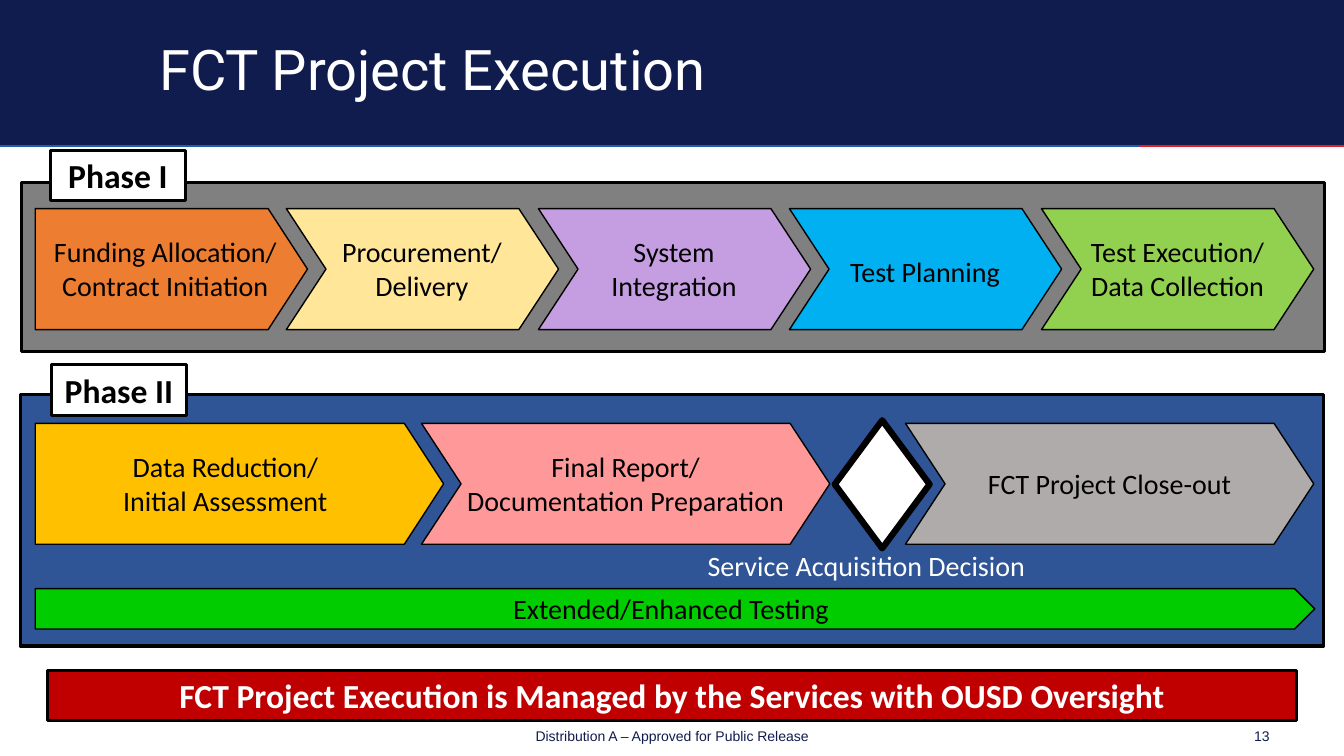
import dataclasses

import pptx
import pptx.dml.color
import pptx.enum.shapes
import pptx.enum.text
import pptx.oxml.ns
import pptx.util
from lxml import etree

SHAPE = pptx.enum.shapes.MSO_SHAPE
ALIGN = pptx.enum.text.PP_ALIGN
ANCHOR = pptx.enum.text.MSO_ANCHOR
FIT = pptx.enum.text.MSO_AUTO_SIZE
SCALE = 9144  # EMU in one px, 100 px to the inch


def emu(*sizes):
    return [size * SCALE for size in sizes]


def rgb(code):
    return pptx.dml.color.RGBColor.from_string(code)


@dataclasses.dataclass(frozen=True)
class Theme:
    navy: str = "111C4E"
    blue: str = "265CAA"
    red: str = "E21E26"
    black: str = "000000"
    white: str = "FFFFFF"
    gray: str = "808080"
    steel: str = "2F5597"
    crimson: str = "C00000"
    green: str = "00CC00"
    orange: str = "ED7D31"
    cream: str = "FFE699"
    violet: str = "C59EE2"
    sky: str = "00B0F0"
    lime: str = "92D050"
    gold: str = "FFC000"
    pink: str = "FF9999"
    silver: str = "AFABAB"
    body: str = "Calibri"
    head: str = "Roboto"
    foot: str = "Arial"
    title: int = 40
    large: int = 24
    label: int = 20
    small: int = 10
    thin: float = 1
    edge: float = 2.25
    thick: float = 4.5


class Deck:
    def __init__(self, theme):
        self.theme = theme
        self.file = pptx.Presentation()
        self.file.slide_width, self.file.slide_height = emu(1333, 750)
        self.slide = self.file.slides.add_slide(self.file.slide_layouts[6])

    def letter(self, shape, text, size, color, font=None, bold=False,
               align=ALIGN.CENTER, anchor=ANCHOR.TOP, fit=FIT.SHAPE_TO_FIT_TEXT):
        frame = shape.text_frame
        frame.word_wrap = True
        frame.auto_size = fit
        frame.vertical_anchor = anchor
        frame.text = text
        for para in frame.paragraphs:
            para.alignment = align
            for run in para.runs:
                run.font.name = font or self.theme.body
                run.font.size = pptx.util.Pt(size)
                run.font.bold = bold
                run.font.color.rgb = rgb(color)
        return frame

    def shape(self, kind, box, fill, width=None, adjust=None):
        item = self.slide.shapes.add_shape(kind, *emu(*box))
        item.shadow.inherit = False
        item.fill.solid()
        item.fill.fore_color.rgb = rgb(fill)
        if width:
            item.line.color.rgb = rgb(self.theme.black)
            item.line.width = pptx.util.Pt(width)
        else:
            item.line.fill.background()
        if adjust:
            item.adjustments[0] = adjust
        return item

    def text(self, box, text, size, color, **style):
        item = self.slide.shapes.add_textbox(*emu(*box))
        return self.letter(item, text, size, color, **style)

    def line(self, start, end, color):
        kind = pptx.enum.shapes.MSO_CONNECTOR.STRAIGHT
        item = self.slide.shapes.add_connector(kind, *emu(*start, *end))
        item.line.color.rgb = rgb(color)
        item.line.width = pptx.util.Pt(self.theme.thin)
        props = item._element.spPr
        etree.SubElement(props, pptx.oxml.ns.qn("a:effectLst"))

    def panel(self, box, fill):
        self.shape(SHAPE.RECTANGLE, box, fill, self.theme.edge)

    def tag(self, left, top, text):
        item = self.shape(SHAPE.RECTANGLE, (left, top, 134, 50),
                          self.theme.white, self.theme.edge)
        self.letter(item, text, self.theme.large, self.theme.black,
                    bold=True, anchor=ANCHOR.MIDDLE)

    def step(self, left, top, width, fill, text, span, high=77, first=False,
             right=0, down=0):
        """Draw an arrow and centre its label, moved by right and down."""
        kind, adjust = (SHAPE.PENTAGON, 0.325) if first else (SHAPE.CHEVRON, 0.328)
        self.shape(kind, (left, top, width, 120), fill, self.theme.thin, adjust)
        box = (left + (width - span) // 2 + right, top + (120 - high) // 2 + down,
               span, high)
        self.text(box, text, self.theme.label, self.theme.black)


def main():
    theme = Theme()
    deck = Deck(theme)

    # Header band and footer
    deck.shape(SHAPE.RECTANGLE, (0, 0, 1333, 144), theme.navy)
    deck.line((0, 145), (1131, 145), theme.blue)
    deck.line((1333, 145), (1131, 145), theme.red)
    deck.text((225, 717, 883, 27), "Distribution A – Approved for Public Release",
              theme.small, theme.navy, font=theme.foot)
    deck.text((1122, 710, 147, 40), "13", theme.small, theme.navy, font=theme.foot,
              align=ALIGN.RIGHT, anchor=ANCHOR.MIDDLE, fit=FIT.NONE)
    title = deck.text((148, 35, 1121, 74), "FCT Project Execution", theme.title,
                      theme.white, font=theme.head, align=ALIGN.LEFT,
                      anchor=ANCHOR.MIDDLE, fit=FIT.NONE)
    title.paragraphs[0].line_spacing = 0.9

    # Closing banner
    banner = deck.shape(SHAPE.RECTANGLE, (47, 665, 1239, 50), theme.crimson, theme.edge)
    deck.letter(banner,
                "FCT Project Execution is Managed by the Services with OUSD Oversight",
                theme.large, theme.white, bold=True)

    # Phase I: five even steps
    deck.panel((21, 181, 1293, 168), theme.gray)
    steps = [
        (theme.orange, "Funding Allocation/\nContract Initiation", 246,
         dict(first=True, right=-6)),
        (theme.cream, "Procurement/\nDelivery", 227, {}),
        (theme.violet, "System Integration", 207, {}),
        (theme.sky, "Test Planning", 181, dict(high=44, down=3)),
        (theme.lime, "Test Execution/\nData Collection", 204, {}),
    ]
    for i, (fill, text, span, extra) in enumerate(steps):
        deck.step(35 + 998 * i // 4, 207, 270, fill, text, span, **extra)
    deck.tag(50, 149, "Phase I")

    # Phase II: three steps and a decision
    deck.panel((20, 391, 1293, 250), theme.steel)
    deck.tag(51, 362, "Phase II")
    steps = [
        (418, theme.pink, "Final Report/\nDocumentation Preparation", 367, {}),
        (898, theme.silver, "FCT Project Close-out", 291, dict(high=44)),
        (35, theme.gold, "Data Reduction/ Initial Assessment", 229,
         dict(first=True, right=-14)),
    ]
    for left, fill, text, span, extra in steps:
        deck.step(left, 420, 405, fill, text, span, **extra)
    deck.text((692, 539, 367, 44), "Service Acquisition Decision", theme.label,
              theme.white, align=ALIGN.LEFT)
    deck.shape(SHAPE.FLOWCHART_DECISION, (828, 417, 94, 127), theme.white, theme.thick)

    # Testing bar along the bottom of Phase II
    deck.shape(SHAPE.PENTAGON, (35, 584, 1269, 40), theme.green, theme.thin)
    deck.text((478, 582, 375, 44), "Extended/Enhanced Testing", theme.label, theme.black)

    deck.file.save("out.pptx")


if __name__ == "__main__":
    main()
